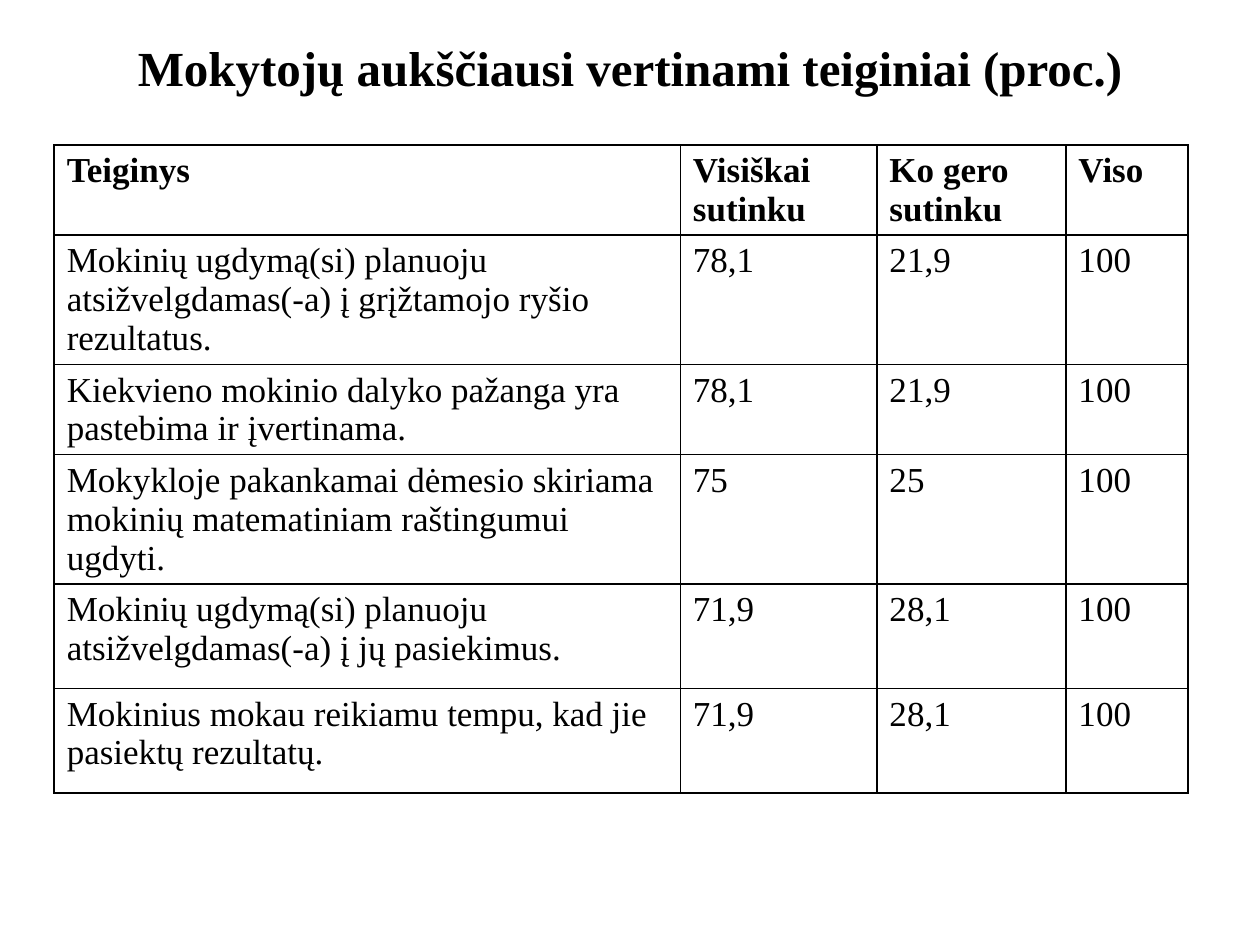
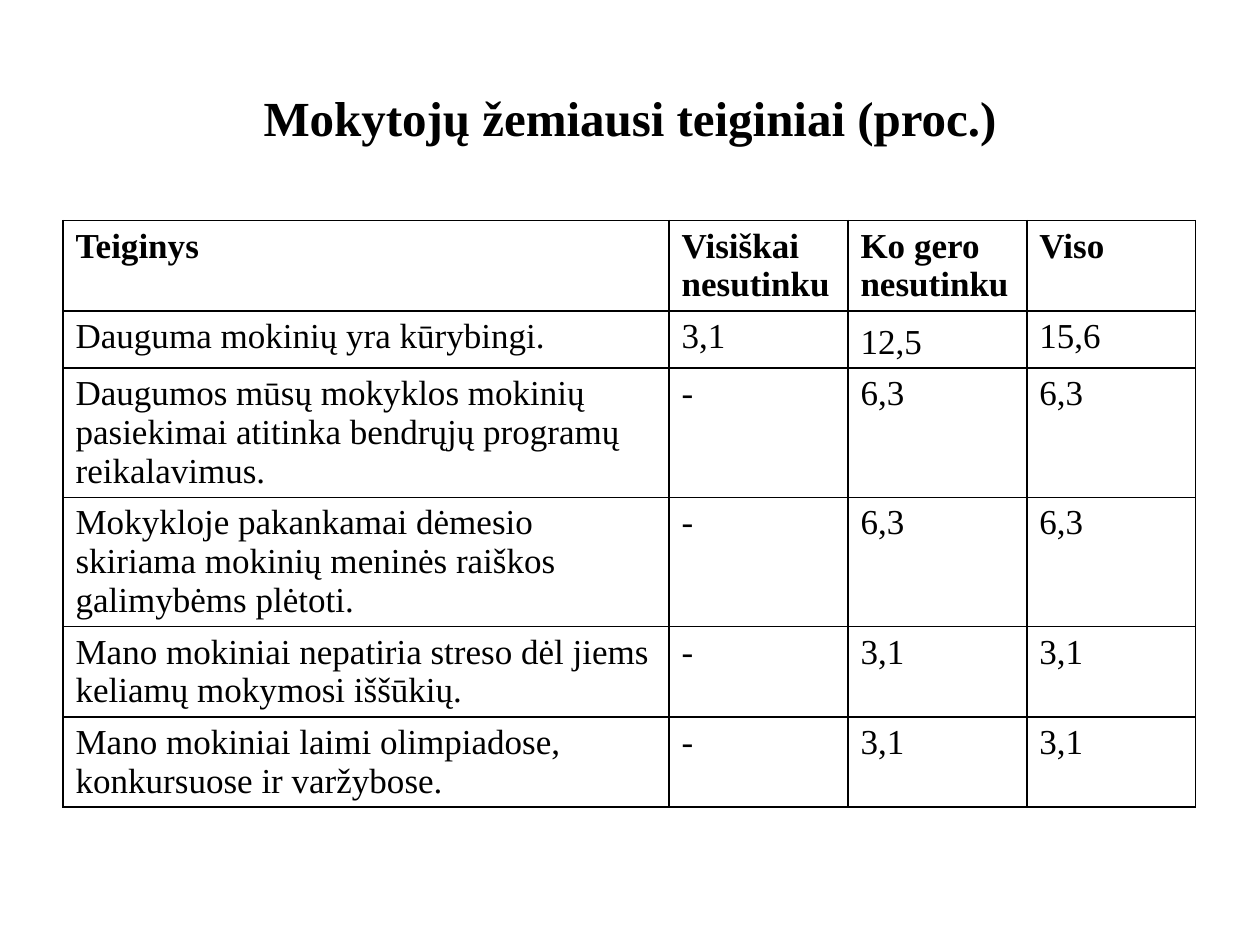
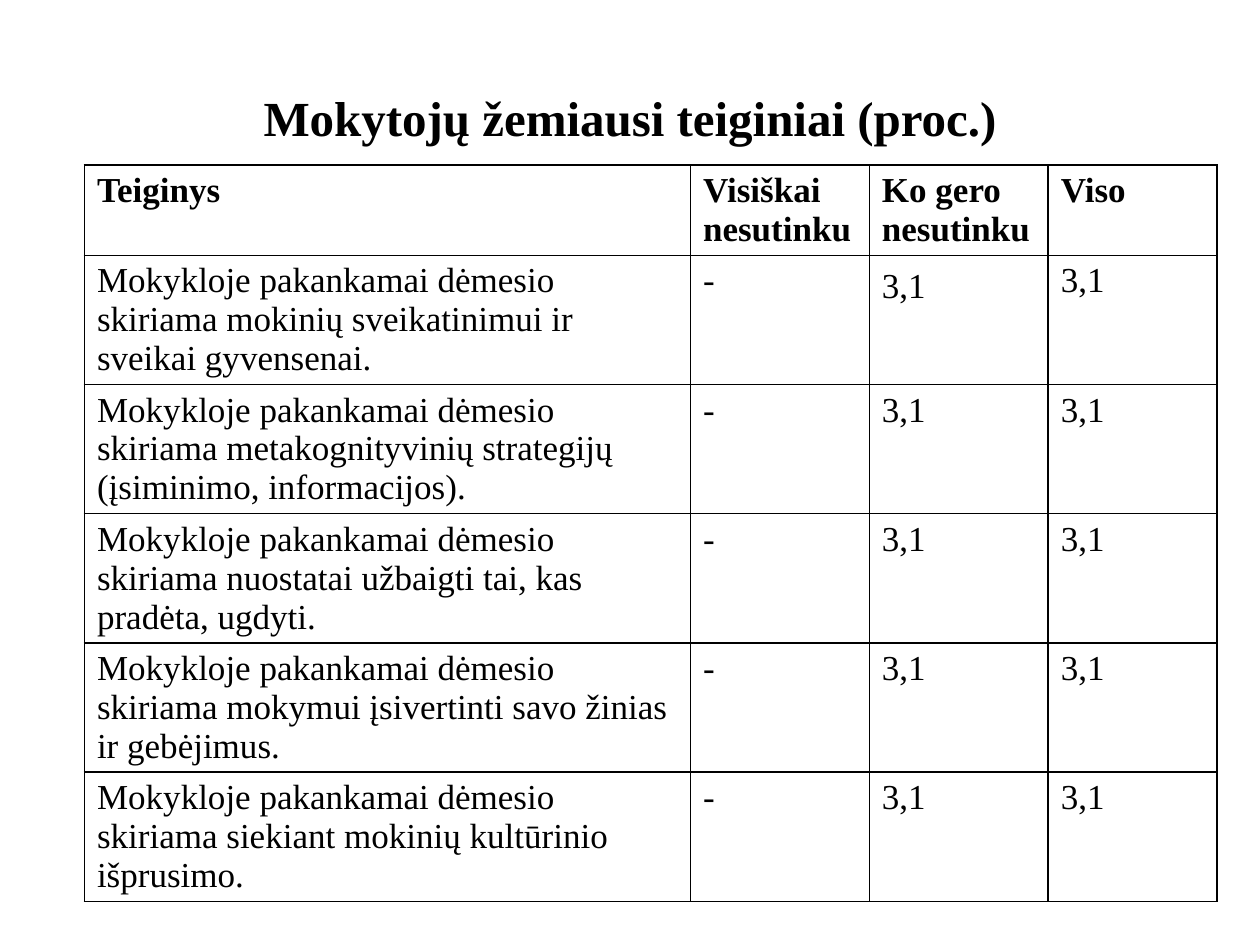
import pptx
import pptx.dml.color
import pptx.enum.text
import pptx.oxml
import pptx.oxml.ns
import pptx.util
from lxml import etree

COLOURS = {"text": "000000", "border": "000000", "background": "FFFFFF"}
FONT = "Times New Roman"
SLIDE_WIDTH, SLIDE_HEIGHT = 10, 7.5
TITLE_LEFT, TITLE_TOP, TITLE_WIDTH = 0.05, 0.04, 0.9
TITLE_SIZE, TABLE_SIZE, BORDER_WIDTH = 28, 20, 1

DISAGREE_HEADER = ["Teiginys", "Visiškai nesutinku", "Ko gero nesutinku", "Viso"]
DISAGREE_COLUMNS = [4.81, 1.42, 1.42, 1.34]
DISAGREE_ROWS = [0.41] * 6
LOWEST_TITLE = "Mokytojų žemiausi teiginiai (proc.)"
LOWEST_TITLE_HEIGHT = 1.25
SPACED_CELL = (1, 2)

HIGHEST = [
    ["Teiginys", "Visiškai sutinku", "Ko gero sutinku", "Viso"],
    ["Mokinių ugdymą(si) planuoju atsižvelgdamas(-a) į grįžtamojo ryšio rezultatus.", "78,1", "21,9", "100"],
    ["Kiekvieno mokinio dalyko pažanga yra pastebima ir įvertinama.", "78,1", "21,9", "100"],
    ["Mokykloje pakankamai dėmesio skiriama mokinių matematiniam raštingumui ugdyti.", "75", "25", "100"],
    ["Mokinių ugdymą(si) planuoju atsižvelgdamas(-a) į jų pasiekimus.", "71,9", "28,1", "100"],
    ["Mokinius mokau reikiamu tempu, kad jie pasiektų rezultatų.", "71,9", "28,1", "100"],
]
LOWEST = [
    DISAGREE_HEADER,
    ["Dauguma mokinių yra kūrybingi.", "3,1", "12,5", "15,6"],
    ["Daugumos mūsų mokyklos mokinių pasiekimai atitinka bendrųjų programų reikalavimus.", "-", "6,3", "6,3"],
    ["Mokykloje pakankamai dėmesio skiriama mokinių meninės raiškos galimybėms plėtoti.", "-", "6,3", "6,3"],
    ["Mano mokiniai nepatiria streso dėl jiems keliamų mokymosi iššūkių.", "-", "3,1", "3,1"],
    ["Mano mokiniai laimi olimpiadose, konkursuose ir varžybose.", "-", "3,1", "3,1"],
]
ATTENTION_TOPICS = [
    "mokinių sveikatinimui ir sveikai gyvensenai.",
    "metakognityvinių strategijų (įsiminimo, informacijos).",
    "nuostatai užbaigti tai, kas pradėta, ugdyti.",
    "mokymui įsivertinti savo žinias ir gebėjimus.",
    "siekiant mokinių kultūrinio išprusimo.",
]
LOWEST_ATTENTION = [DISAGREE_HEADER] + [
    [f"Mokykloje pakankamai dėmesio skiriama {topic}", "-", "3,1", "3,1"]
    for topic in ATTENTION_TOPICS
]


def colour(name):
    return pptx.dml.color.RGBColor.from_string(COLOURS[name])


def across(share):
    return pptx.util.Inches(share * SLIDE_WIDTH)


def down(share):
    return pptx.util.Inches(share * SLIDE_HEIGHT)


def style_paragraph(paragraph, size, bold):
    paragraph.font.name = FONT
    paragraph.font.size = pptx.util.Pt(size)
    paragraph.font.bold = bold
    paragraph.font.color.rgb = colour("text")


def add_titled_slide(presentation, text, height):
    slide = presentation.slides.add_slide(presentation.slide_layouts[5])
    slide.background.fill.solid()
    slide.background.fill.fore_color.rgb = colour("background")
    title = slide.shapes.title
    title.left, title.top = across(TITLE_LEFT), down(TITLE_TOP)
    title.width, title.height = across(TITLE_WIDTH), pptx.util.Inches(height)
    frame = title.text_frame
    frame.text = text
    frame.word_wrap = True
    frame.auto_size = pptx.enum.text.MSO_AUTO_SIZE.NONE
    frame.vertical_anchor = pptx.enum.text.MSO_ANCHOR.MIDDLE
    paragraph = frame.paragraphs[0]
    paragraph.alignment = pptx.enum.text.PP_ALIGN.CENTER
    style_paragraph(paragraph, TITLE_SIZE, True)
    return slide


def add_borders(cell):
    properties = cell._tc.get_or_add_tcPr()
    for index, side in enumerate(("lnL", "lnR", "lnT", "lnB")):
        line = etree.Element(pptx.oxml.ns.qn(f"a:{side}"), w=str(pptx.util.Pt(BORDER_WIDTH)))
        fill = etree.SubElement(line, pptx.oxml.ns.qn("a:solidFill"))
        etree.SubElement(fill, pptx.oxml.ns.qn("a:srgbClr"), val=COLOURS["border"])
        properties.insert(index, line)


def fill_cell(cell, text, bold):
    cell.text = text
    cell.fill.background()
    add_borders(cell)
    style_paragraph(cell.text_frame.paragraphs[0], TABLE_SIZE, bold)


def add_statement_table(slide, left, top, height, columns, rows, content):
    shape = slide.shapes.add_table(
        len(rows), len(columns), pptx.util.Inches(left), pptx.util.Inches(top),
        pptx.util.Inches(sum(columns)), pptx.util.Inches(height))
    table = shape.table
    table.first_row = False
    table.horz_banding = False
    for column, width in zip(table.columns, columns):
        column.width = pptx.util.Inches(width)
    for row, row_height in zip(table.rows, rows):
        row.height = pptx.util.Inches(row_height)
    shape.height = pptx.util.Inches(height)
    for row_index, texts in enumerate(content):
        for column_index, text in enumerate(texts):
            fill_cell(table.cell(row_index, column_index), text, row_index == 0)
    return table


def add_lowest_slide(presentation, left, top, height, content):
    slide = add_titled_slide(presentation, LOWEST_TITLE, LOWEST_TITLE_HEIGHT)
    table = add_statement_table(
        slide, left, top, height, DISAGREE_COLUMNS, DISAGREE_ROWS, content)
    paragraph = table.cell(*SPACED_CELL).text_frame.paragraphs[0]
    paragraph.line_spacing = 1.15
    paragraph.space_after = pptx.util.Pt(10)


def main():
    presentation = pptx.Presentation()
    presentation.slide_width = pptx.util.Inches(SLIDE_WIDTH)
    presentation.slide_height = pptx.util.Inches(SLIDE_HEIGHT)
    slide = add_titled_slide(
        presentation, "Mokytojų aukščiausi vertinami teiginiai (proc.)", 0.46)
    add_statement_table(
        slide, 0.43, 1.15, 5.38, [4.97, 1.56, 1.5, 0.97],
        [0.53] + [0.47] * 3 + [0.83] * 2, HIGHEST)
    add_lowest_slide(presentation, 0.5, 1.75, 4.98, LOWEST)
    add_lowest_slide(presentation, 0.67, 1.31, 6.27, LOWEST_ATTENTION)
    presentation.save("out.pptx")


if __name__ == "__main__":
    main()
